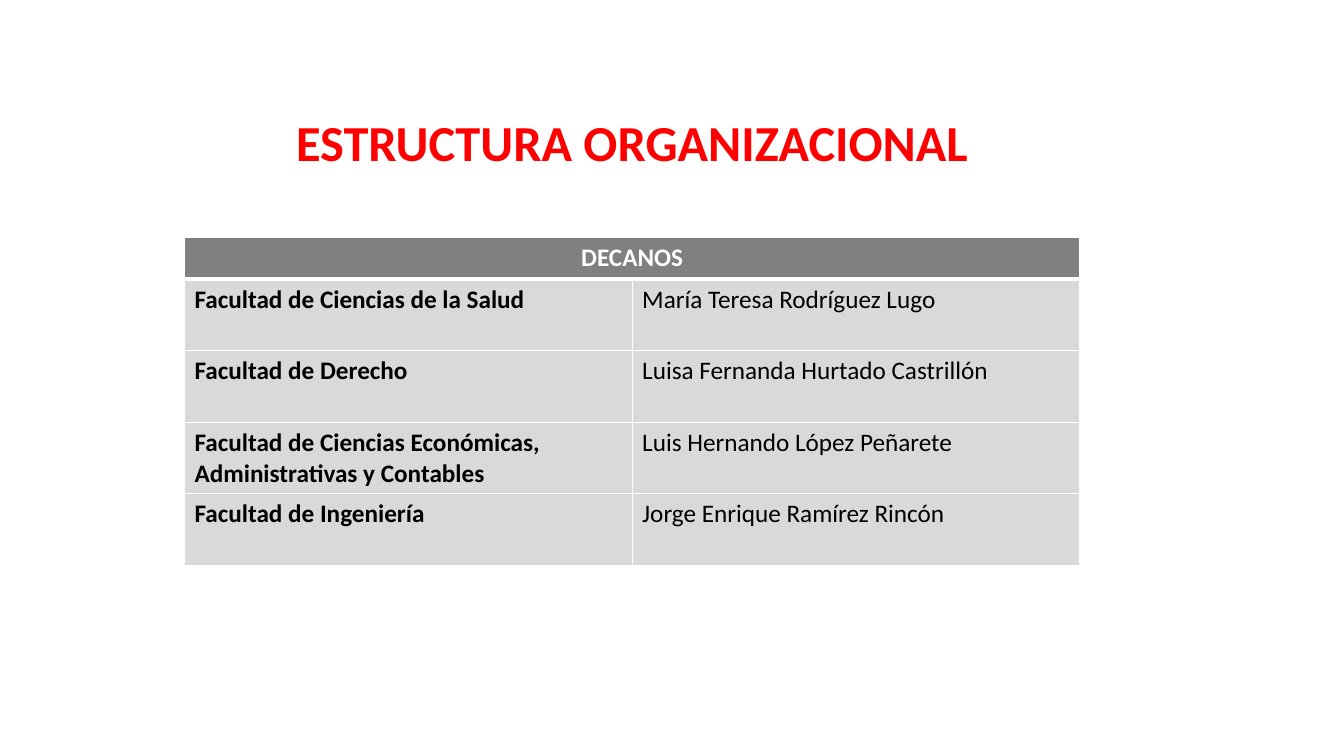
"""Builds the slide that lists the dean of each faculty."""
import pptx
import pptx.dml.color
import pptx.enum.text
import pptx.oxml.ns
import pptx.util
from lxml import etree

Inches = pptx.util.Inches
Pt = pptx.util.Pt
ALIGN = pptx.enum.text.PP_ALIGN
ANCHOR = pptx.enum.text.MSO_ANCHOR

COLORS = {
    "title": "FF0000",
    "header": "808080",
    "body": "D9D9D9",
    "light": "FFFFFF",
    "dark": "000000",
}

DEANS = [
    ("Facultad de Ciencias de la Salud", "María Teresa Rodríguez Lugo"),
    ("Facultad de Derecho", "Luisa Fernanda Hurtado Castrillón"),
    ("Facultad de Ciencias Económicas, Administrativas y Contables",
     "Luis Hernando López Peñarete"),
    ("Facultad de Ingeniería", "Jorge Enrique Ramírez Rincón"),
]


def rgb(name):
    return pptx.dml.color.RGBColor.from_string(COLORS[name])


def write(frame, text, *, size=18, color="dark", bold=False, align=ALIGN.LEFT,
          spacing=None, font="Calibri"):
    paragraph = frame.paragraphs[0]
    paragraph.alignment = align
    paragraph.line_spacing = spacing
    run = paragraph.add_run()
    run.text = text
    run.font.name = font
    run.font.size = Pt(size)
    run.font.bold = bold
    run.font.color.rgb = rgb(color)


class DeanSlide:
    def __init__(self, slide, border_color="light"):
        self.slide = slide
        self.border_color = border_color

    def title(self, text, left, top, width, height):
        box = self.slide.shapes.add_textbox(
            Inches(left), Inches(top), Inches(width), Inches(height))
        frame = box.text_frame
        frame.word_wrap = True
        frame.vertical_anchor = ANCHOR.BOTTOM
        write(frame, text, size=36, color="title", bold=True,
              align=ALIGN.CENTER, spacing=0.9)

    def borders(self, cell, top=1, bottom=1):
        qn = pptx.oxml.ns.qn
        properties = cell._tc.get_or_add_tcPr()
        for side, points in (("L", 1), ("R", 1), ("T", top), ("B", bottom)):
            line = etree.SubElement(properties, qn(f"a:ln{side}"), w=str(Pt(points)))
            fill = etree.SubElement(line, qn("a:solidFill"))
            etree.SubElement(fill, qn("a:srgbClr"), val=COLORS[self.border_color])

    def cell(self, cell, fill, top=1, bottom=1):
        self.borders(cell, top, bottom)
        cell.fill.solid()
        cell.fill.fore_color.rgb = rgb(fill)

    def dean_table(self, heading, deans, left, top, width, header_height, row_height):
        height = header_height + row_height * len(deans)
        table = self.slide.shapes.add_table(
            len(deans) + 1, 2, Inches(left), Inches(top),
            Inches(width), Inches(height)).table
        table.horz_banding = False
        table.rows[0].height = Inches(header_height)
        for column in range(2):
            self.cell(table.cell(0, column), "header", bottom=3)
        table.cell(0, 0).merge(table.cell(0, 1))
        write(table.cell(0, 0).text_frame, heading, color="light", bold=True,
              align=ALIGN.CENTER)
        for row, dean in enumerate(deans, start=1):
            table.rows[row].height = Inches(row_height)
            for column, text in enumerate(dean):
                cell = table.cell(row, column)
                self.cell(cell, "body", top=3 if row == 1 else 1)
                write(cell.text_frame, text, bold=column == 0)


def main():
    deck = pptx.Presentation()
    deck.slide_width = Inches(13.33)
    deck.slide_height = Inches(7.5)
    page = DeanSlide(deck.slides.add_slide(deck.slide_layouts[6]))
    page.title("ESTRUCTURA ORGANIZACIONAL", 1.27, 0.83, 10, 0.93)
    page.dean_table("DECANOS", DEANS, 1.83, 2.36, 8.88, 0.41, 0.71)
    deck.save("out.pptx")


if __name__ == "__main__":
    main()
